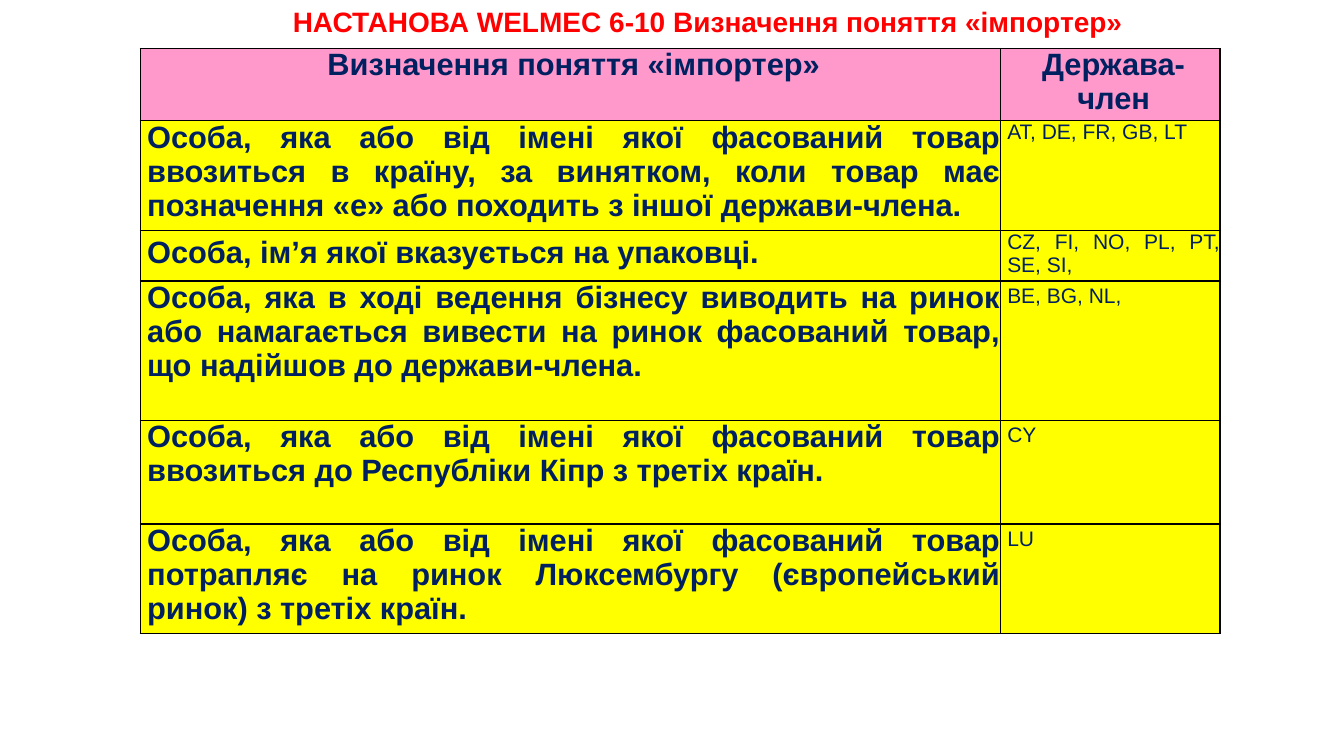
from lxml.etree import SubElement
from pptx import Presentation
from pptx.dml.color import RGBColor
from pptx.enum.text import MSO_AUTO_SIZE, PP_ALIGN
from pptx.oxml.ns import qn
from pptx.util import Inches, Pt

COLORS = {
    "title": "FF0000",
    "text": "002060",
    "header": "FF99CC",
    "body": "FFFF00",
    "border": "000000",
}
COLUMN_WIDTHS = [8.53, 2.18]
ROWS = [
    (0.71, "Визначення поняття «імпортер»", 0.98, "Держава-член", 0.98),
    (1.09, "Особа, яка або від імені якої фасований товар ввозиться в країну, за винятком, "
           "коли товар має позначення «е» або походить з іншої держави-члена.", 0.99,
     "AT, DE, FR, GB, LT", 0.99),
    (0.5, "Особа, ім’я якої вказується на упаковці.", 1.15,
     "CZ, FI, NO, PL, PT, SE, SI,", 0.99),
    (1.38, "Особа, яка в ході ведення бізнесу виводить на ринок або намагається вивести "
           "на ринок фасований товар, що надійшов до держави-члена.", 0.99,
     "BE, BG, NL,", 1.15),
    (1.03, "Особа, яка або від імені якої фасований товар ввозиться до Республіки Кіпр "
           "з третіх країн.", 0.99, "CY", 1.15),
    (1.09, "Особа, яка або від імені якої фасований товар потрапляє на ринок Люксембургу "
           "(європейський ринок) з третіх країн.", 0.99, "LU", 1.15),
]


def write_text(text_frame, text, size, color, bold, alignment):
    text_frame.text = text
    paragraph = text_frame.paragraphs[0]
    paragraph.alignment = alignment
    font = paragraph.runs[0].font
    font.name = "Arial"
    font.size = Pt(size)
    font.bold = bold
    font.color.rgb = RGBColor.from_string(COLORS[color])
    return paragraph


def add_borders(cell):
    properties = cell._tc.get_or_add_tcPr()
    for side in ("a:lnL", "a:lnR", "a:lnT", "a:lnB"):
        line = SubElement(properties, qn(side), w=str(Pt(1)))
        fill = SubElement(line, qn("a:solidFill"))
        SubElement(fill, qn("a:srgbClr"), val=COLORS["border"])


presentation = Presentation()
presentation.slide_width = Inches(13.33)
presentation.slide_height = Inches(7.5)
slide = presentation.slides.add_slide(presentation.slide_layouts[6])

title = slide.shapes.add_textbox(Inches(2.77), 0, Inches(8.5), Inches(0.44))
title.text_frame.word_wrap = True
title.text_frame.auto_size = MSO_AUTO_SIZE.SHAPE_TO_FIT_TEXT
write_text(title.text_frame, "НАСТАНОВА WELMEC 6-10 Визначення поняття «імпортер»",
           20, "title", True, PP_ALIGN.CENTER)

table = slide.shapes.add_table(
    len(ROWS), len(COLUMN_WIDTHS), Inches(1.39), Inches(0.48),
    Inches(sum(COLUMN_WIDTHS)), Inches(sum(row[0] for row in ROWS))).table
table.first_row = False
table.horz_banding = False
for column, width in zip(table.columns, COLUMN_WIDTHS):
    column.width = Inches(width)

for row_index, (height, definition, definition_spacing, states, states_spacing) in enumerate(ROWS):
    table.rows[row_index].height = Inches(height)
    is_header = row_index == 0
    contents = [(definition, definition_spacing, True), (states, states_spacing, is_header)]
    for column_index, (text, spacing, bold) in enumerate(contents):
        cell = table.cell(row_index, column_index)
        cell.margin_left = cell.margin_right = cell.margin_top = cell.margin_bottom = 0
        add_borders(cell)
        cell.fill.solid()
        cell.fill.fore_color.rgb = RGBColor.from_string(COLORS["header" if is_header else "body"])
        paragraph = write_text(cell.text_frame, text, 22 if bold else 15, "text", bold,
                               PP_ALIGN.CENTER if is_header else PP_ALIGN.JUSTIFY)
        paragraph.line_spacing = spacing
        paragraph._p.get_or_add_pPr().set("marL", str(Inches(0.07)))

presentation.save("out.pptx")
